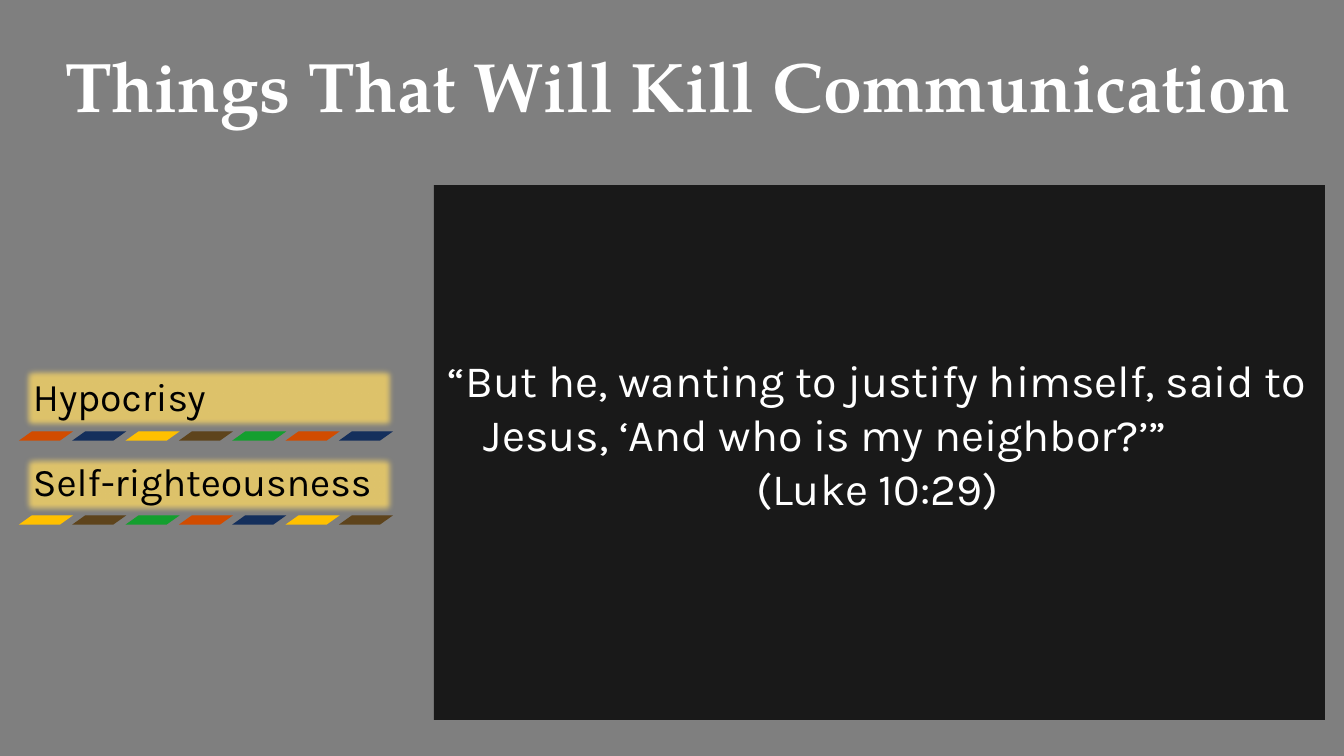
from dataclasses import dataclass
from lxml.etree import SubElement
from pptx import Presentation
from pptx.dml.color import RGBColor
from pptx.enum.shapes import MSO_SHAPE
from pptx.enum.text import MSO_ANCHOR, PP_ALIGN
from pptx.oxml.ns import qn
from pptx.util import Pt

TITLE = "Things That Will Kill Communication"
QUOTE = [
    ("“But he, wanting to justify himself, said to", PP_ALIGN.CENTER, 0),
    ("Jesus, ‘And who is my neighbor?’”", PP_ALIGN.LEFT, 42),
    ("(Luke 10:29)", PP_ALIGN.CENTER, 0),
]
TOPICS = [
    {"name": "Hypocrisy", "top": 365, "height": 67, "stripe_top": 432, "first_color": 0},
    {"name": "Self-righteousness", "top": 453, "height": 64, "stripe_top": 516, "first_color": 2},
]


@dataclass(frozen=True)
class Theme:
    dark: str = "000000"
    light: str = "FFFFFF"
    label: str = "FFD966"
    stripes: tuple = ("D14C00", "142F5C", "FFC000", "5E441C", "149F2F")
    title_font: str = "TeX Gyre Pagella"
    body_font: str = "Karla"
    title_size: int = 50
    quote_size: int = 32
    label_size: int = 28


THEME = Theme()
EMU_PER_PX = 914400 / 100.8
PAGE_WIDTH, PAGE_HEIGHT = 1344, 756
TOPIC_LEFT, TOPIC_WIDTH = 21, 377
STRIPE_COUNT, STRIPE_WIDTH, STRIPE_HEIGHT = 7, 50, 8
STRIPE_SPAN = 320
STRIPE_SLANT = 1.41
SOFT_EDGE = 7


def px(length):
    return round(length * EMU_PER_PX)


def add_block(shapes, kind, bounds, color, opacity=100):
    block = shapes.add_shape(kind, *map(px, bounds))
    block.shadow.inherit = False
    block.fill.solid()
    block.fill.fore_color.rgb = RGBColor.from_string(color)
    block.line.fill.background()
    if opacity < 100:
        color_node = block._element.spPr.find(qn("a:solidFill"))[0]
        SubElement(color_node, qn("a:alpha"), val=str(opacity * 1000))
    return block


def add_text_box(shapes, bounds, anchor, side_inset, end_inset):
    box = shapes.add_textbox(*map(px, bounds))
    frame = box.text_frame
    frame.word_wrap = True
    frame.vertical_anchor = anchor
    frame.margin_left = frame.margin_right = px(side_inset)
    frame.margin_top = frame.margin_bottom = px(end_inset)
    return frame


def add_span(para, text, font, size, color, bold=False):
    span = para.add_run()
    span.text = text
    span.font.name = font
    span.font.size = Pt(size)
    span.font.bold = bold
    span.font.color.rgb = RGBColor.from_string(color)


def add_title(page):
    frame = add_text_box(page.shapes, (38, 26, 1280, 102), MSO_ANCHOR.BOTTOM, 0, 0)
    para = frame.paragraphs[0]
    para.alignment = PP_ALIGN.CENTER
    para.line_spacing = 0.9
    add_span(para, TITLE, THEME.title_font, THEME.title_size, THEME.light, True)


def add_quote(page):
    frame = add_text_box(page.shapes, (438, 348, 879, 176), MSO_ANCHOR.TOP, 4, 5)
    for index, (text, alignment, indent) in enumerate(QUOTE):
        para = frame.add_paragraph() if index else frame.paragraphs[0]
        para.alignment = alignment
        if indent:
            para._p.get_or_add_pPr().set("marL", str(px(indent)))
        add_span(para, text, THEME.body_font, THEME.quote_size, THEME.light)


def add_topic(page, topic):
    shapes = page.shapes.add_group_shape().shapes
    bounds = (TOPIC_LEFT, topic["top"], TOPIC_WIDTH, topic["height"])
    label = add_block(shapes, MSO_SHAPE.RECTANGLE, bounds, THEME.label, 75)
    effects = label._element.spPr.find(qn("a:effectLst"))
    SubElement(effects, qn("a:softEdge"), rad=str(px(SOFT_EDGE)))

    frame = add_text_box(shapes, bounds, MSO_ANCHOR.BOTTOM, 12, 12)
    para = frame.paragraphs[0]
    para.line_spacing = 0.9
    add_span(para, topic["name"], THEME.body_font, THEME.label_size, THEME.dark)

    for index in range(STRIPE_COUNT):
        left = TOPIC_LEFT + index * STRIPE_SPAN / (STRIPE_COUNT - 1)
        color = THEME.stripes[(topic["first_color"] + index) % len(THEME.stripes)]
        stripe = add_block(shapes, MSO_SHAPE.PARALLELOGRAM,
                           (left, topic["stripe_top"], STRIPE_WIDTH, STRIPE_HEIGHT), color)
        stripe.adjustments[0] = STRIPE_SLANT
        stripe.line.color.rgb = RGBColor.from_string(color)
        stripe.line.width = Pt(1)
        SubElement(stripe._element.spPr.find(qn("a:ln")), qn("a:miter"), lim="800000")


def main():
    deck = Presentation()
    deck.slide_width, deck.slide_height = px(PAGE_WIDTH), px(PAGE_HEIGHT)
    page = deck.slides.add_slide(deck.slide_layouts[6])
    add_block(page.shapes, MSO_SHAPE.RECTANGLE, (0, 0, PAGE_WIDTH, PAGE_HEIGHT), THEME.dark, 50)
    add_block(page.shapes, MSO_SHAPE.RECTANGLE, (434, 185, 891, 535), THEME.dark, 80)
    add_title(page)
    add_quote(page)
    for topic in TOPICS:
        add_topic(page, topic)
    deck.save("out.pptx")


if __name__ == "__main__":
    main()
